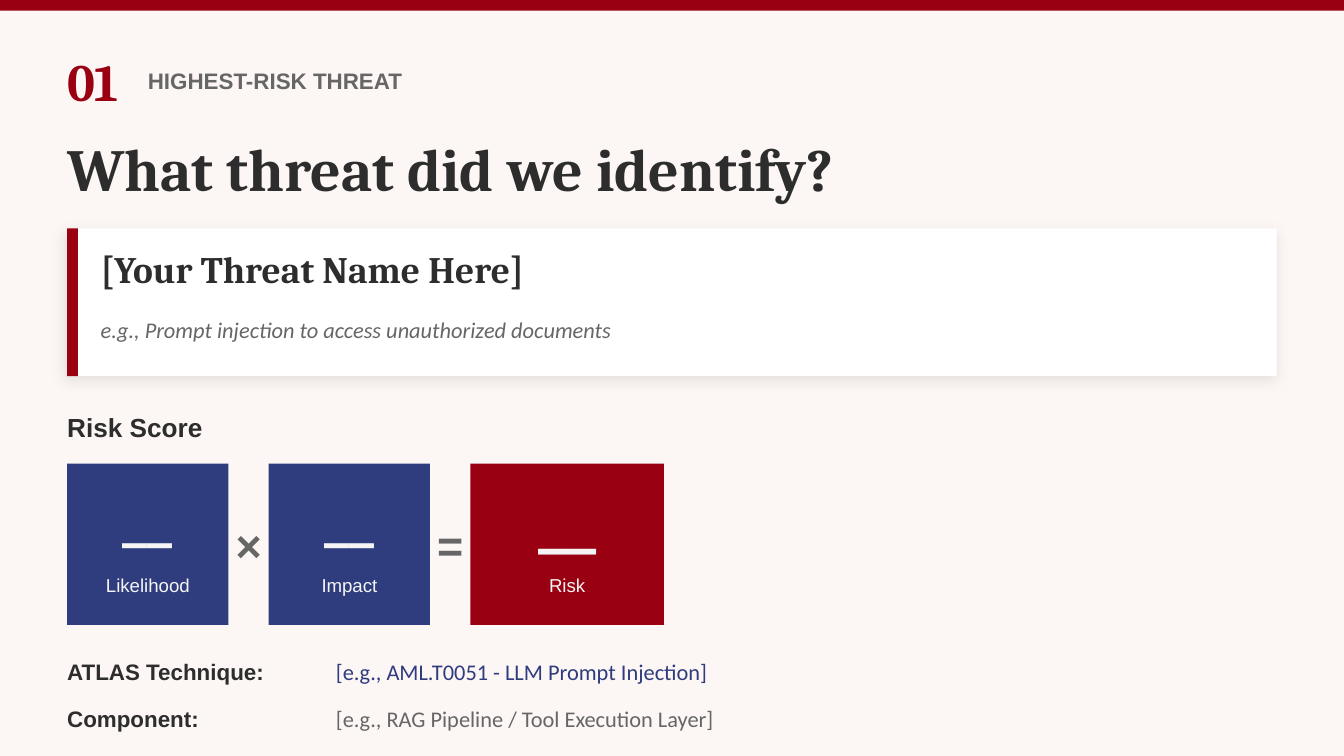
import pptx
import pptx.util
from lxml import etree
from pptx.dml.color import RGBColor
from pptx.enum.shapes import MSO_SHAPE
from pptx.enum.text import MSO_ANCHOR, PP_ALIGN
from pptx.oxml.ns import qn

Pt = pptx.util.Pt

CRIMSON = RGBColor(0x99, 0x00, 0x11)
NAVY = RGBColor(0x2F, 0x3C, 0x7E)
INK = RGBColor(0x2D, 0x2D, 0x2D)
GRAY = RGBColor(0x66, 0x66, 0x66)
PALE = RGBColor(0xF5, 0xF5, 0xF5)
WHITE = RGBColor(0xFF, 0xFF, 0xFF)
CREAM = RGBColor(0xFC, 0xF6, 0xF5)

NUMBER = "01"
SECTION = "HIGHEST-RISK THREAT"
TITLE = "What threat did we identify?"
THREAT = "[Your Threat Name Here]"
THREAT_EXAMPLE = "e.g., Prompt injection to access unauthorized documents"
SCORE_HEADING = "Risk Score"
# label, score, score size, tile width, tile colour, operator after the tile
SCORES = [
    ("Likelihood", "__", 36, 86.4, NAVY, "×"),
    ("Impact", "__", 36, 86.4, NAVY, "="),
    ("Risk", "__", 42, 103.68, CRIMSON, None),
]
DETAILS = [
    ("ATLAS Technique:", "[e.g., AML.T0051 - LLM Prompt Injection]", NAVY),
    ("Component:", "[e.g., RAG Pipeline / Tool Execution Layer]", GRAY),
]

SLIDE_WIDTH, SLIDE_HEIGHT = 720, 405
MARGIN = 36
CONTENT_WIDTH = SLIDE_WIDTH - 2 * MARGIN
ACCENT = 5.76
CARD_TOP, CARD_HEIGHT = 122.4, 79.2
CARD_TEXT_LEFT, CARD_TEXT_WIDTH = 54, 612
TILE_TOP, TILE_HEIGHT = 248.4, 86.4
OPERATOR_WIDTH = 21.6
DETAIL_TOP, DETAIL_STEP = 349.2, 25.2
DETAIL_LABEL_WIDTH = 144


def add_box(slide, left, top, width, height, color):
    shape = slide.shapes.add_shape(
        MSO_SHAPE.RECTANGLE, Pt(left), Pt(top), Pt(width), Pt(height))
    shape.shadow.inherit = False
    shape.fill.solid()
    shape.fill.fore_color.rgb = color
    shape.line.fill.background()
    return shape


def add_soft_shadow(shape):
    effects = shape._element.spPr.find(qn("a:effectLst"))
    shadow = etree.SubElement(
        effects, qn("a:outerShdw"), blurRad=str(Pt(8)), dist=str(Pt(2)),
        dir=str(135 * 60000), algn="bl", rotWithShape="0")
    color = etree.SubElement(shadow, qn("a:srgbClr"), val="000000")
    etree.SubElement(color, qn("a:alpha"), val="10000")


def add_text(slide, text, left, top, width, height, font, size, color,
             bold=False, italic=False, align=None):
    box = slide.shapes.add_textbox(Pt(left), Pt(top), Pt(width), Pt(height))
    frame = box.text_frame
    frame.word_wrap = True
    frame.vertical_anchor = MSO_ANCHOR.MIDDLE
    frame.margin_left = frame.margin_right = 0
    frame.margin_top = frame.margin_bottom = 0
    frame.text = text
    paragraph = frame.paragraphs[0]
    paragraph.alignment = align
    run_font = paragraph.runs[0].font
    run_font.name = font
    run_font.size = Pt(size)
    run_font.color.rgb = color
    run_font.bold = bold
    run_font.italic = italic


def add_header(slide):
    add_box(slide, 0, 0, SLIDE_WIDTH, ACCENT, CRIMSON)
    add_text(slide, NUMBER, MARGIN, 25.2, 43.2, 36, "Cambria", 28, CRIMSON, bold=True)
    add_text(slide, SECTION, 79.2, 28.8, 288, 28.8, "Arial", 12, GRAY, bold=True)
    add_text(slide, TITLE, MARGIN, 68.4, CONTENT_WIDTH, 43.2, "Cambria", 32, INK, bold=True)


def add_threat_card(slide):
    card = add_box(slide, MARGIN, CARD_TOP, CONTENT_WIDTH, CARD_HEIGHT, WHITE)
    add_soft_shadow(card)
    add_box(slide, MARGIN, CARD_TOP, ACCENT, CARD_HEIGHT, CRIMSON)
    add_text(slide, THREAT, CARD_TEXT_LEFT, CARD_TOP, CARD_TEXT_WIDTH, 43.2,
             "Cambria", 20, INK, bold=True)
    add_text(slide, THREAT_EXAMPLE, CARD_TEXT_LEFT, CARD_TOP + 39.6, CARD_TEXT_WIDTH, 28.8,
             "Calibri", 12, GRAY, italic=True)


def add_risk_score(slide):
    add_text(slide, SCORE_HEADING, MARGIN, 216, 144, 25.2, "Arial", 14, INK, bold=True)
    left = MARGIN
    for label, score, size, width, color, operator in SCORES:
        add_box(slide, left, TILE_TOP, width, TILE_HEIGHT, color)
        add_text(slide, score, left, TILE_TOP, width, 54, "Cambria", size, PALE,
                 bold=True, align=PP_ALIGN.CENTER)
        add_text(slide, label, left, TILE_TOP + 50.4, width, 28.8, "Arial", 10, PALE,
                 align=PP_ALIGN.CENTER)
        left += width
        if operator:
            add_text(slide, operator, left, TILE_TOP, OPERATOR_WIDTH, TILE_HEIGHT,
                     "Arial", 24, GRAY, bold=True, align=PP_ALIGN.CENTER)
            left += OPERATOR_WIDTH


def add_details(slide):
    for row, (label, value, color) in enumerate(DETAILS):
        top = DETAIL_TOP + row * DETAIL_STEP
        add_text(slide, label, MARGIN, top, DETAIL_LABEL_WIDTH, 21.6, "Arial", 12, INK, bold=True)
        add_text(slide, value, MARGIN + DETAIL_LABEL_WIDTH, top, 360, 21.6, "Calibri", 12, color)


def main():
    presentation = pptx.Presentation()
    presentation.slide_width = Pt(SLIDE_WIDTH)
    presentation.slide_height = Pt(SLIDE_HEIGHT)
    slide = presentation.slides.add_slide(presentation.slide_layouts[6])
    slide.background.fill.solid()
    slide.background.fill.fore_color.rgb = CREAM
    add_header(slide)
    add_threat_card(slide)
    add_risk_score(slide)
    add_details(slide)
    presentation.save("out.pptx")


if __name__ == "__main__":
    main()
